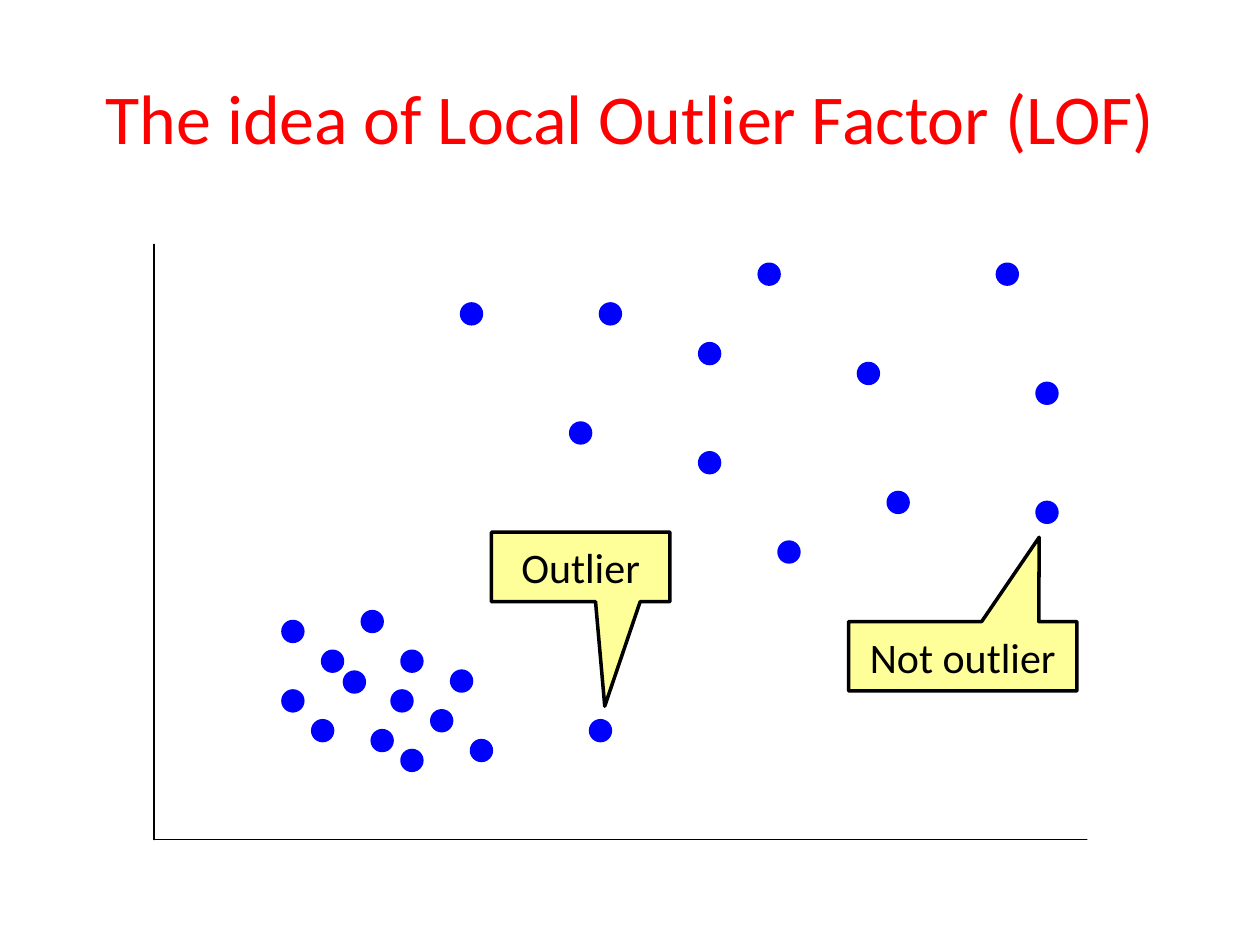
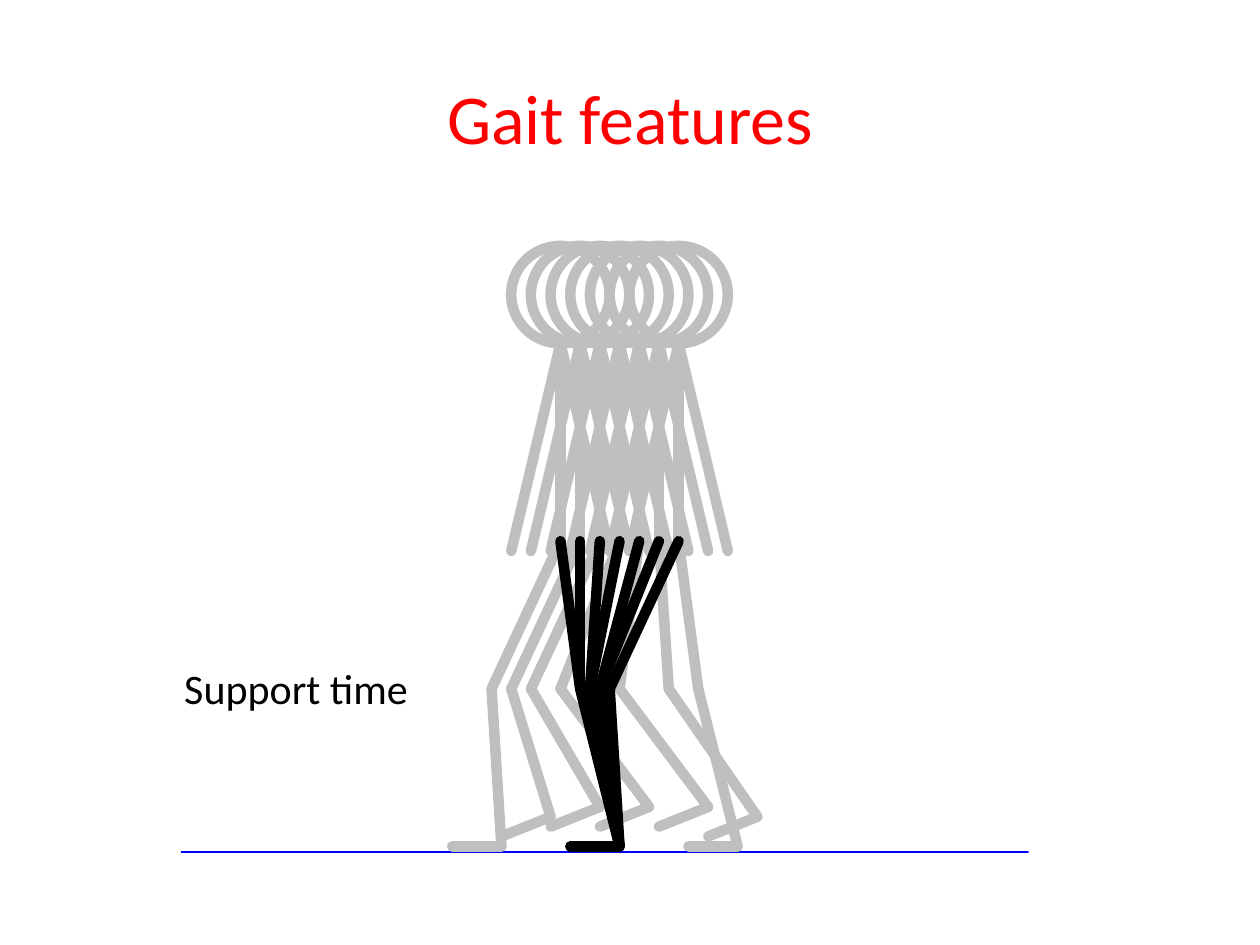
from collections import namedtuple
from dataclasses import dataclass
from itertools import pairwise

from lxml import etree
from pptx import Presentation
from pptx.dml.color import RGBColor
from pptx.enum.shapes import MSO_CONNECTOR, MSO_SHAPE
from pptx.enum.text import MSO_ANCHOR, MSO_AUTO_SIZE, PP_ALIGN
from pptx.oxml.ns import qn
from pptx.util import Pt

LINE = MSO_CONNECTOR.STRAIGHT
OVAL = MSO_SHAPE.OVAL
CALLOUT = MSO_SHAPE.RECTANGULAR_CALLOUT
MIDDLE = MSO_ANCHOR.MIDDLE
CENTER = PP_ALIGN.CENTER
GROW = MSO_AUTO_SIZE.SHAPE_TO_FIT_TEXT
TITLE_ONLY = 5

Box = namedtuple("Box", "x y w h")


@dataclass(frozen=True)
class Theme:
    font: str = "Calibri"
    title_size: int = 40
    label_size: int = 24
    title: str = "FF0000"
    ink: str = "000000"
    blue: str = "0000FF"
    note: str = "FFFF99"
    ghost: str = "BFBFBF"
    thin: int = 1
    outline: int = 2
    limb: int = 6


THEME = Theme()
TITLE_BOX = Box(36, 21.6, 648, 90)

# Scatter plot: left and top of each dot, in grid steps from the plot's corner
PLOT_BOX = Box(88, 139.7, 533, 340)
PLOT_COLS = 94
DOT_STEPS = 2
DENSE_DOTS = [
    (17, 41), (13, 38), (19.2, 43.1), (13, 45), (16, 48), (21, 37), (25, 51),
    (22, 49), (32, 50), (28, 47), (24, 45), (25, 41), (30, 43),
]
SPARSE_DOTS = [
    (55, 21), (42, 18), (71, 12), (74, 25), (45, 6), (55, 10), (31, 6),
    (61, 2), (85, 2), (89, 14), (63, 30), (89, 26),
]
OUTLIER_DOTS = [(44, 48)]
# Text, box in grid steps, pointer offset as a share of the box
CALLOUTS = [
    ("Outlier", Box(34, 29, 18, 7), (0.135, 2.005)),
    ("Not outlier", Box(70, 38, 23, 7), (0.335, -1.713)),
]

# Walker: heights and columns in body units
WALKER_BOX = Box(258.4, 140.5, 174.4, 343.13)
WALKER_ROWS = 61
NECK, HIP, HAND, KNEE, ANKLE = 9.9, 30, 31, 45, 61
HEAD_RADIUS, ARM_REACH = 5, 5
HIP_COLS = range(11, 24, 2)
SWING_LEGS = [
    [(23, HIP), (25, KNEE), (29, ANKLE), (24, ANKLE)],
    [(21, HIP), (22, KNEE), (31, 58), (26, 60)],
    [(19, HIP), (17, KNEE), (26, 57), (21, 59)],
    [(11, HIP), (4, KNEE), (5, ANKLE), (0, ANKLE)],
    [(13, HIP), (6, KNEE), (10, 58), (5, 60)],
    [(15, HIP), (8, KNEE), (15, 57), (10, 59)],
    [(17, HIP), (11, KNEE), (20, 57), (15, 59)],
]
SUPPORT_KNEES = [13, 13, 14, 14, 15, 15, 16]
SUPPORT_ANKLE, SUPPORT_TOE = (17, ANKLE), (12, ANKLE)
GROUND_BOX = Box(103.7, 486.7, 483.8, 0)
LABEL_BOX = Box(97.2, 375.1, 144, 36)


def rgb(color):
    return RGBColor.from_string(color)


def pts(values):
    return [Pt(round(v, 2)) for v in values]


def set_stroke(line, color, width):
    """Solid line with round ends and corners."""
    line.color.rgb = rgb(color)
    line.width = Pt(width)


def round_off(sp):
    ln = sp.line._get_or_add_ln()
    ln.set("cap", "rnd")
    etree.SubElement(ln, qn("a:round"))


def add_line(shapes, start, end, color, width):
    s = shapes.add_connector(LINE, *pts(start + end))
    set_stroke(s.line, color, width)
    round_off(s)
    etree.SubElement(s.line._get_or_add_ln().getparent(), qn("a:effectLst"))


def add_path(shapes, points, color, width):
    for start, end in pairwise(points):
        add_line(shapes, start, end, color, width)


def add_preset(shapes, kind, box, fill, color, width):
    s = shapes.add_shape(kind, *pts(box))
    s.shadow.inherit = False
    if fill:
        s.fill.solid()
        s.fill.fore_color.rgb = rgb(fill)
    else:
        s.fill.background()
    set_stroke(s.line, color, width)
    round_off(s)
    return s


def set_text(s, text, size, color):
    tf = s.text_frame
    tf.text = text
    p = tf.paragraphs[0]
    p.alignment = CENTER
    font = p.runs[0].font
    font.name, font.size, font.color.rgb = THEME.font, Pt(size), rgb(color)
    return tf


def add_titled_slide(prs, text):
    slide = prs.slides.add_slide(prs.slide_layouts[TITLE_ONLY])
    s = slide.shapes.title
    s.left, s.top, s.width, s.height = pts(TITLE_BOX)
    tf = set_text(s, text, THEME.title_size, THEME.title)
    tf.vertical_anchor = MIDDLE
    return slide


def add_axes(shapes, box):
    bottom = box.y + box.h
    corners = [(box.x, box.y), (box.x, bottom), (box.x + box.w, bottom)]
    add_path(shapes, corners, THEME.ink, THEME.thin)


def add_scatter(shapes, box):
    step = box.w / PLOT_COLS

    def place(cell):
        return Box(box.x + cell.x * step, box.y + cell.y * step,
                   cell.w * step, cell.h * step)

    add_axes(shapes, box)
    for col, row in DENSE_DOTS + SPARSE_DOTS + OUTLIER_DOTS:
        dot = place(Box(col, row, DOT_STEPS, DOT_STEPS))
        add_preset(shapes, OVAL, dot, THEME.blue, THEME.blue, THEME.outline)
    for text, cell, pointer in CALLOUTS:
        s = add_preset(shapes, CALLOUT, place(cell), THEME.note, THEME.ink,
                       THEME.outline)
        for i, offset in enumerate(pointer):
            s.adjustments[i] = offset
        tf = set_text(s, text, THEME.label_size, THEME.ink)
        tf.vertical_anchor = MIDDLE


def add_upper_body(shapes, col, at, unit):
    """Trunk, head and two arms above the hip at the given column."""
    def limb(end):
        add_line(shapes, at(col, NECK), at(*end), THEME.ghost, THEME.limb)

    limb((col, HIP))
    head = Box(*at(col - HEAD_RADIUS, 0), 2 * HEAD_RADIUS * unit, NECK * unit)
    add_preset(shapes, OVAL, head, None, THEME.ghost, THEME.limb)
    for side in (1, -1):
        limb((col + side * ARM_REACH, HAND))


def add_walker(shapes, box):
    unit = box.h / WALKER_ROWS

    def at(col, row):
        return box.x + col * unit, box.y + row * unit

    for col in reversed(HIP_COLS):
        add_upper_body(shapes.add_group_shape().shapes, col, at, unit)
    for leg in SWING_LEGS:
        joints = [at(*joint) for joint in leg]
        add_path(shapes.add_group_shape().shapes, joints, THEME.ghost, THEME.limb)

    ankle = at(*SUPPORT_ANKLE)
    for hip, knee in zip(HIP_COLS, SUPPORT_KNEES):
        add_line(shapes, at(hip, HIP), at(knee, KNEE), THEME.ink, THEME.limb)
    for knee in sorted(set(SUPPORT_KNEES)):
        add_line(shapes, at(knee, KNEE), ankle, THEME.ink, THEME.limb)
    add_line(shapes, ankle, at(*SUPPORT_TOE), THEME.ink, THEME.limb)


def add_ground(shapes, box):
    add_line(shapes, (box.x + box.w, box.y), (box.x, box.y), THEME.blue,
             THEME.thin)


def add_label(shapes, box, text):
    tf = set_text(shapes.add_textbox(*pts(box)), text, THEME.label_size, THEME.ink)
    tf.word_wrap = False
    tf.auto_size = GROW


def main():
    prs = Presentation()
    prs.slide_width, prs.slide_height = Pt(720), Pt(540)

    lof = add_titled_slide(prs, "The idea of Local Outlier Factor (LOF)")
    add_scatter(lof.shapes, PLOT_BOX)

    gait = add_titled_slide(prs, "Gait features")
    add_ground(gait.shapes, GROUND_BOX)
    add_walker(gait.shapes, WALKER_BOX)
    add_label(gait.shapes, LABEL_BOX, "Support time")

    prs.save("out.pptx")


if __name__ == "__main__":
    main()
